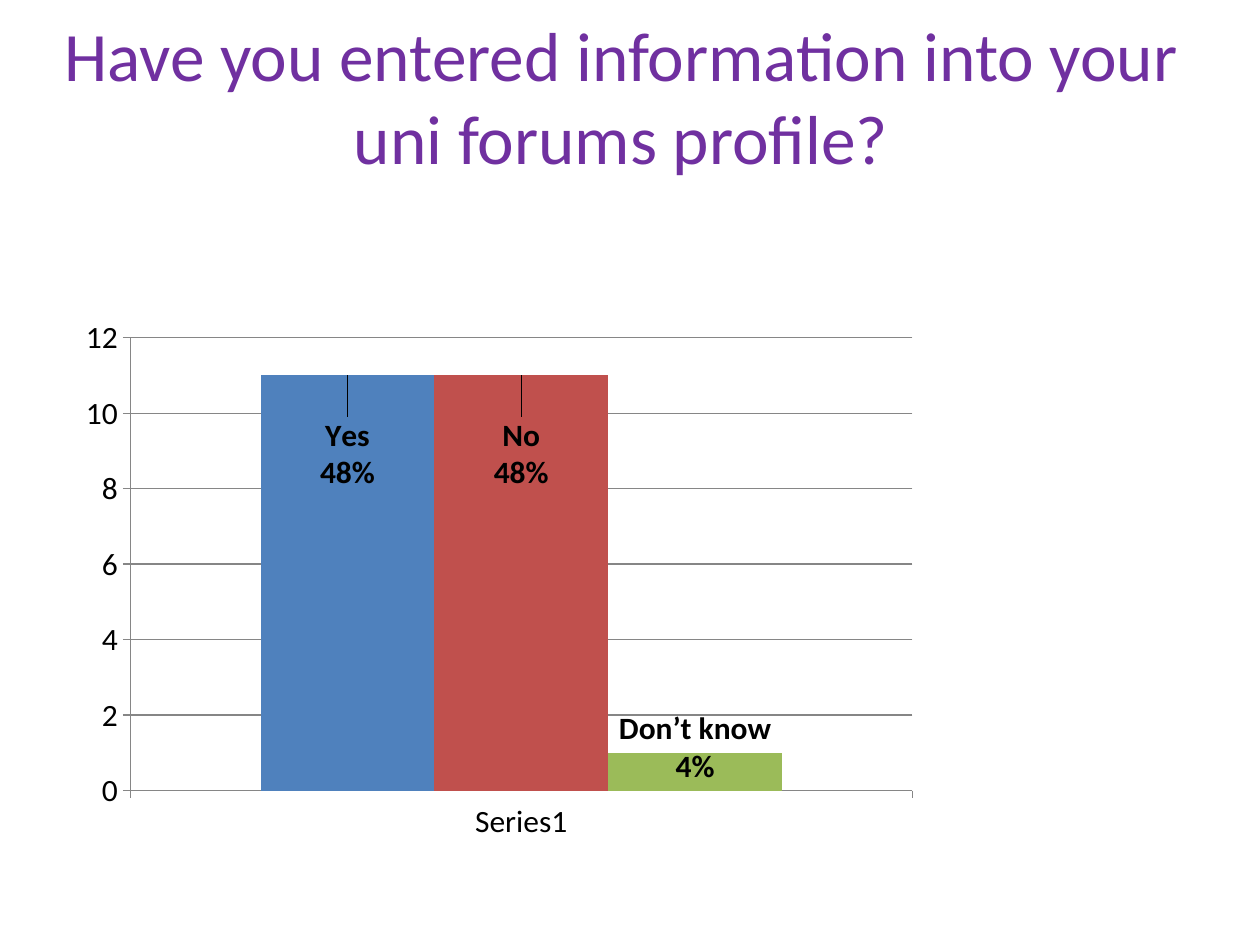
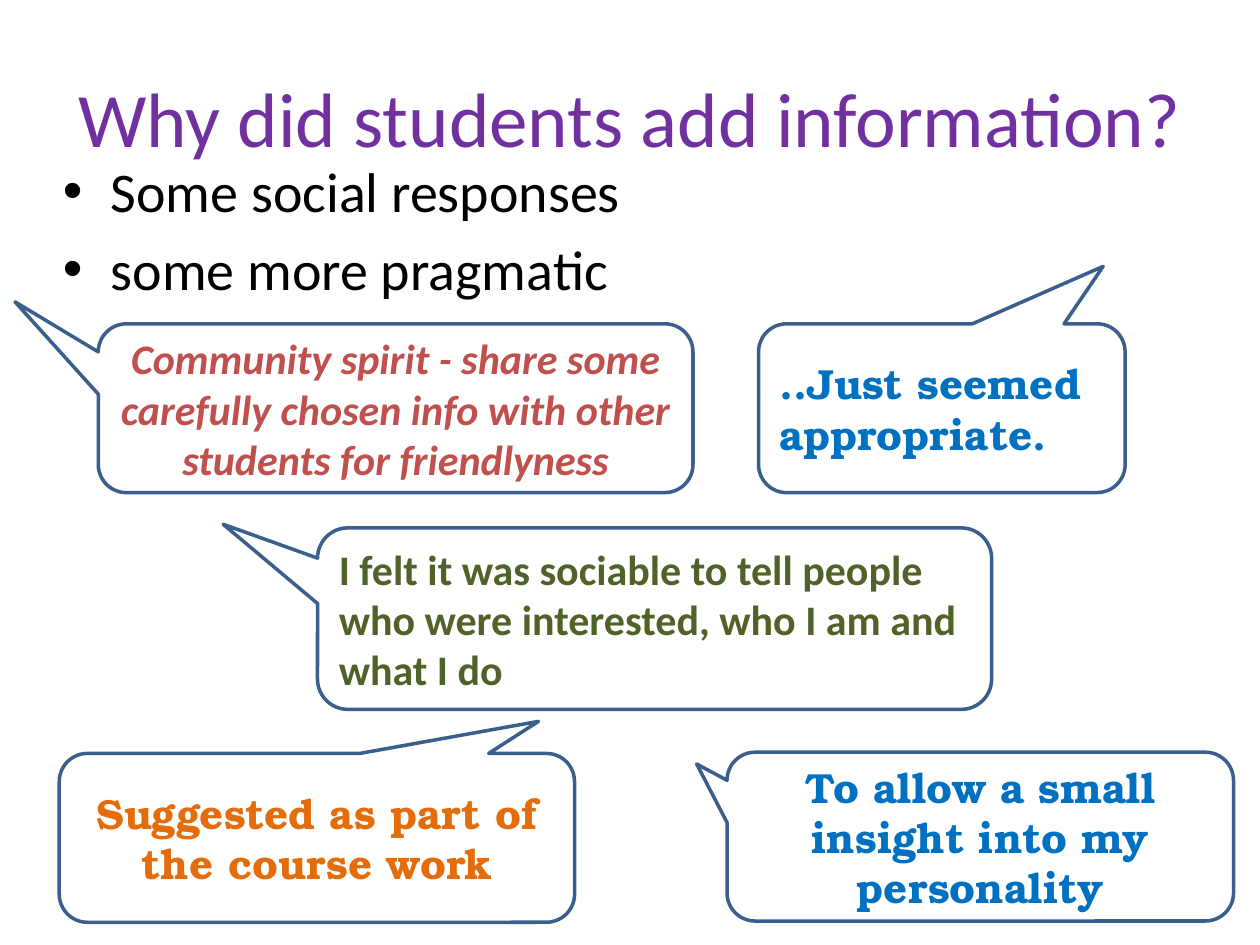
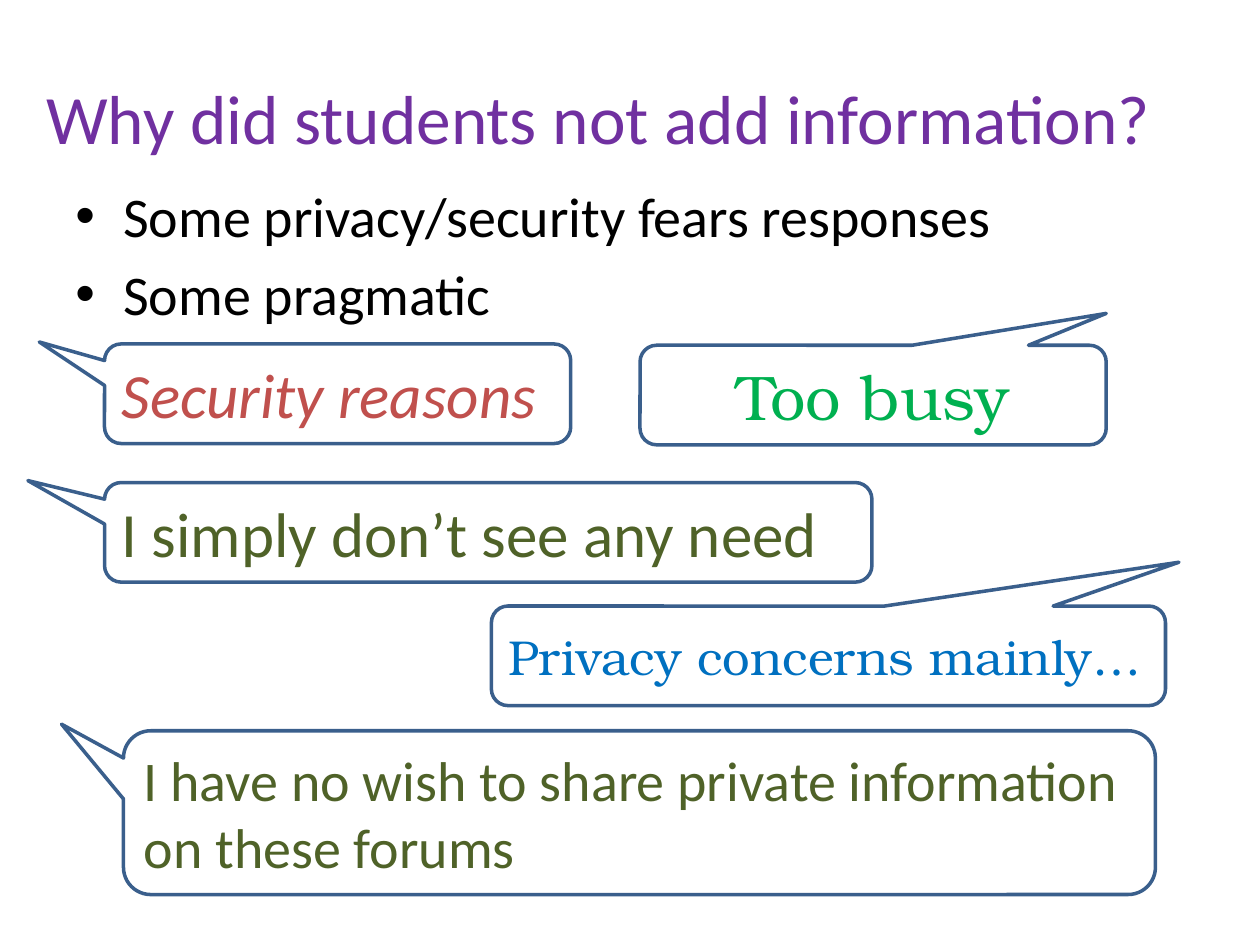
"""Build three survey slides on why students fill in their forum profiles."""
from lxml.etree import SubElement
from pptx import Presentation
from pptx.chart.data import CategoryChartData
from pptx.dml.color import RGBColor
from pptx.enum.chart import XL_CHART_TYPE as ChartType
from pptx.enum.chart import XL_LABEL_POSITION as LabelPosition
from pptx.enum.chart import XL_TICK_MARK as TickMark
from pptx.enum.shapes import MSO_SHAPE as Shape
from pptx.enum.text import MSO_ANCHOR as Anchor
from pptx.enum.text import MSO_AUTO_SIZE as AutoSize
from pptx.enum.text import PP_ALIGN as Align
from pptx.oxml import parse_xml
from pptx.oxml.ns import nsdecls, qn
from pptx.util import Inches, Pt

COLORS = {
    "title": "7030A0", "text": "000000", "outline": "3A5F8C", "axis": "868686",
    "red": "C0504D", "blue": "0070C0", "olive": "4F6228", "orange": "E46C0A", "green": "00B050",
    "yes": "4F81BD", "no": "C0504D", "unsure": "9BBB59",
}
SANS, SERIF = "Calibri", "TeX Gyre Bonum"

deck = Presentation()
deck.slide_width, deck.slide_height = Inches(10), Inches(7.5)
CELL = deck.slide_width / 100


def grid(*cells):
    """Turn cells of a 100 by 75 grid into lengths."""
    return [round(cell * CELL) for cell in cells]


def write(frame, text, size=24, font=SANS, color="text", bold=False, italic=False,
          align=Align.LEFT, anchor=Anchor.MIDDLE, bullet=False):
    """Fill a text frame, one paragraph per line of text."""
    frame.word_wrap = True
    frame.auto_size = AutoSize.NONE
    frame.vertical_anchor = anchor
    frame.text = text
    for paragraph in frame.paragraphs:
        paragraph.alignment = align
        for run in paragraph.runs:
            run.font.size, run.font.name = Pt(size), font
            run.font.bold, run.font.italic = bold, italic
            run.font.color.rgb = RGBColor.from_string(COLORS[color])
        if bullet:
            paragraph.space_before = Pt(size * 0.2)
            properties = paragraph._p.get_or_add_pPr()
            properties.set("marL", str(Inches(0.38)))
            properties.set("indent", str(-Inches(0.38)))
            SubElement(properties, qn("a:buFont"), typeface="Arial")
            SubElement(properties, qn("a:buChar"), char="•")


PAGES = [
    {"title": "Have you entered information into your uni forums profile?",
     "title_at": (0.3, 1.3, 98, 12.5), "title_size": 39.6},
    {"title": "Why did students add information?",
     "title_at": (5, 3, 90, 12.5), "title_size": 44,
     "points": "Some social responses\nsome more pragmatic", "points_at": (4, 11.9, 84.5, 11.8),
     "quotes": [
         ("Community spirit - share some carefully chosen info with other students for friendlyness",
          (7.8, 25.7, 47.2, 13.4), (-0.64, -0.63),
          dict(color="red", bold=True, italic=True, align=Align.CENTER)),
         ("To allow a small insight into my personality",
          (57.7, 59.7, 40.2, 13.4), (-0.56, -0.43),
          dict(font=SERIF, color="blue", bold=True, align=Align.CENTER)),
         ("I felt it was sociable to tell people who were interested, who I am and what I do",
          (25.2, 41.9, 53.5, 14.4), (-0.64, -0.52), dict(color="olive", bold=True)),
         ("..Just seemed appropriate.",
          (60.2, 25.7, 29.1, 13.4), (0.44, -0.84), dict(font=SERIF, color="blue", bold=True)),
         ("Suggested as part of the course work",
          (4.7, 59.8, 40.9, 13.4), (0.43, -0.69),
          dict(font=SERIF, color="orange", bold=True, align=Align.CENTER)),
     ]},
    {"title": "Why did students not add information?",
     "title_at": (0, 3, 95, 12.5), "title_size": 39.6,
     "points": "Some privacy/security fears responses\nSome pragmatic",
     "points_at": (5, 13.9, 90, 56.7),
     "quotes": [
         ("Security reasons", (8.3, 27.3, 37, 7.9), (-0.64, -0.52),
          dict(size=36, color="red", italic=True)),
         ("Privacy concerns mainly…", (39, 48.1, 53.5, 7.9), (0.52, -0.94),
          dict(size=28, font=SERIF, color="blue")),
         ("I have no wish to share private information on these forums",
          (9.8, 58, 81.9, 13), (-0.56, -0.54), dict(size=32, color="olive")),
         ("Too busy", (50.8, 27.4, 37, 7.9), (0.5, -0.82),
          dict(size=36, font=SERIF, color="green", align=Align.CENTER)),
         ("I simply don’t see any need", (8.3, 38.3, 60.9, 7.9), (-0.6, -0.52),
          dict(size=36, color="olive")),
     ]},
]

for page in PAGES:
    slide = deck.slides.add_slide(deck.slide_layouts[5])
    heading = slide.shapes.title
    heading.left, heading.top, heading.width, heading.height = grid(*page["title_at"])
    write(heading.text_frame, page["title"], size=page["title_size"], color="title",
          align=Align.CENTER)
    if "points" in page:
        points = slide.shapes.add_textbox(*grid(*page["points_at"]))
        write(points.text_frame, page["points"], size=32, anchor=Anchor.TOP, bullet=True)
    for words, place, tip, style in page.get("quotes", []):
        quote = slide.shapes.add_shape(Shape.ROUNDED_RECTANGULAR_CALLOUT, *grid(*place))
        quote.adjustments[0], quote.adjustments[1] = tip
        quote.shadow.inherit = False
        quote.fill.background()
        quote.line.color.rgb = RGBColor.from_string(COLORS["outline"])
        quote.line.width = Pt(2)
        write(quote.text_frame, words, **style)

ANSWERS = [
    ("Yes", 11, "Yes\n48%", "yes", 0.23),
    ("Series 2", 11, "No\n48%", "no", 0.23),
    ("Series 3", 1, "Don’t know\n4%", "unsure", 0.07),
]
survey = CategoryChartData()
survey.categories = ["Series1"]
for name, votes, *_ in ANSWERS:
    survey.add_series(name, [votes])
chart = deck.slides[0].shapes.add_chart(
    ChartType.COLUMN_CLUSTERED, *grid(5.1, 24.3, 74.8, 42.4), survey).chart
chart.has_legend = chart.has_title = False
chart.font.size, chart.font.name = Pt(18), SANS
chart.font.color.rgb = RGBColor.from_string(COLORS["text"])

votes_axis = chart.value_axis
votes_axis.minimum_scale, votes_axis.maximum_scale, votes_axis.major_unit = 0, 12, 2
votes_axis.has_major_gridlines = True
for axis in (votes_axis, chart.category_axis):
    axis.major_tick_mark = TickMark.OUTSIDE
for line in (votes_axis.format.line, chart.category_axis.format.line,
             votes_axis.major_gridlines.format.line):
    line.color.rgb = RGBColor.from_string(COLORS["axis"])
    line.width = Pt(0.75)

bars = chart.plots[0]
bars.gap_width, bars.overlap, bars.vary_by_categories = 150, 0, False
for series, (_, _, caption, color, drop) in zip(bars.series, ANSWERS):
    series.format.fill.solid()
    series.format.fill.fore_color.rgb = RGBColor.from_string(COLORS[color])
    label = series.points[0].data_label
    write(label.text_frame, caption, size=18, bold=True, align=Align.CENTER)
    label.position = LabelPosition.OUTSIDE_END
    series._element.xpath(".//c:dLbl/c:idx")[0].addnext(parse_xml(
        f'<c:layout {nsdecls("c")}><c:manualLayout><c:x val="0"/><c:y val="{drop}"/>'
        '</c:manualLayout></c:layout>'))

plot_area = chart._chartSpace.chart.plotArea
for spare in plot_area.findall(qn("c:layout")):
    plot_area.remove(spare)
plot_area.insert(0, parse_xml(
    f'<c:layout {nsdecls("c")}><c:manualLayout><c:layoutTarget val="inner"/>'
    '<c:xMode val="edge"/><c:yMode val="edge"/><c:x val="0.07"/><c:y val="0.06"/>'
    '<c:w val="0.83"/><c:h val="0.86"/></c:manualLayout></c:layout>'))

deck.save("out.pptx")
